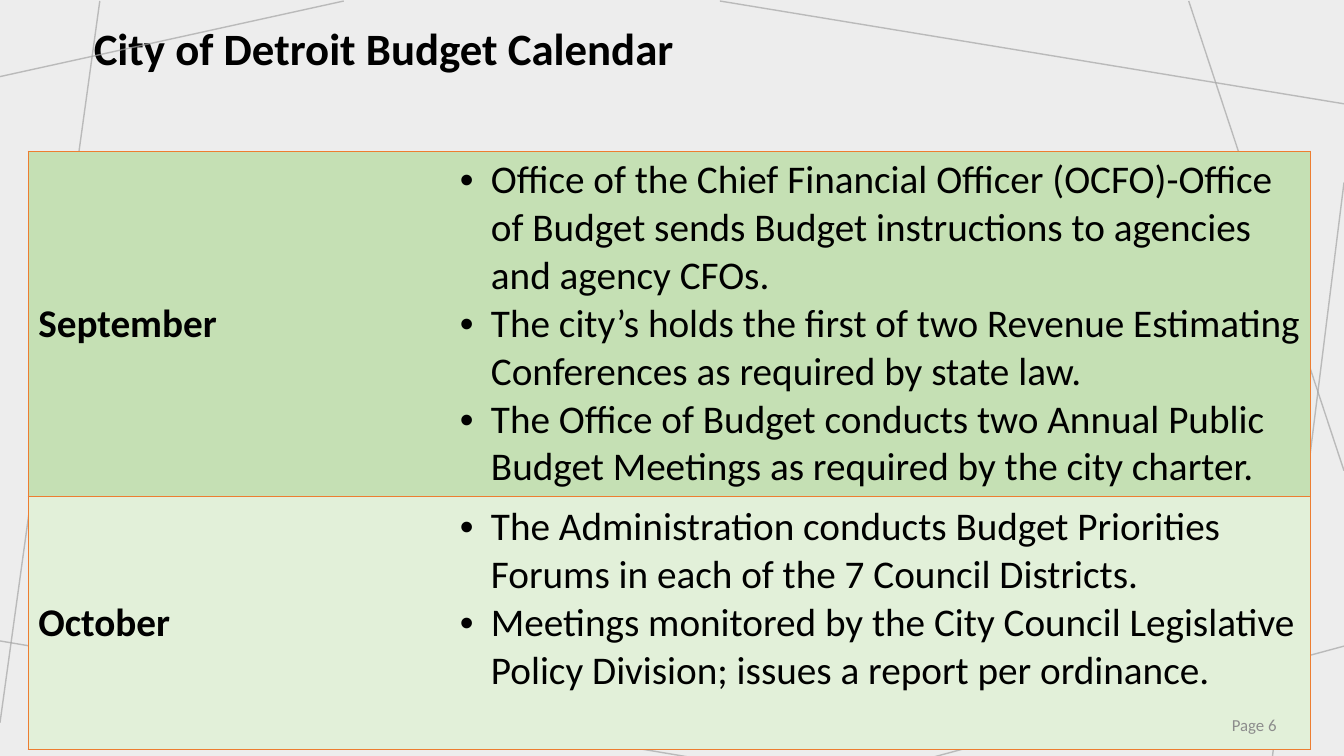
from lxml.etree import SubElement
from pptx import Presentation
from pptx.dml.color import RGBColor
from pptx.enum.shapes import MSO_CONNECTOR as Connector
from pptx.enum.text import MSO_ANCHOR as Anchor, MSO_AUTO_SIZE as AutoSize, PP_ALIGN as Align
from pptx.oxml import parse_xml
from pptx.oxml.ns import nsdecls, qn
from pptx.util import Emu, Pt

PX = 9144

BACKGROUND_LINES = [
    (341, 1, 0, 76), (99, 1, 0, 717), (683, 751, -5, 635), (1333, 641, 926, 751),
    (1333, 181, 1262, 751), (1333, 467, 1179, 1), (1333, 103, 714, 1),
]
CALENDAR = [
    ("September", "C5E0B4", 298, 5, [
        "Office of the Chief Financial Officer (OCFO)-Office of Budget sends Budget "
        "instructions to agencies and agency CFOs.",
        "The city’s holds the first of two Revenue Estimating Conferences as required by state law.",
        "The Office of Budget conducts two Annual Public Budget Meetings as required by the city charter.",
    ]),
    ("October", "E2F0D9", 251, 53, [
        "The Administration conducts Budget Priorities Forums in each of the 7 Council Districts.",
        "Meetings monitored by the City Council Legislative Policy Division; issues a report per ordinance.",
    ]),
]


def px(length):
    return Emu(length * PX)


def color(value):
    return RGBColor.from_string(value)


class SlideBuilder:
    font_name = "Calibri"
    ink = "000000"
    line_color = "A5A5A5"
    border_color = "ED7D31"

    def __init__(self, deck):
        self.page = deck.slides.add_slide(deck.slide_layouts[5])

    def background(self, value):
        fill = self.page.background.fill
        fill.solid()
        fill.fore_color.rgb = color(value)

    def line(self, *ends):
        line = self.page.shapes.add_connector(Connector.STRAIGHT, *map(px, ends))
        line.line.width = Pt(1)
        line.line.color.rgb = color(self.line_color)
        tint = line.line._ln.find(".//" + qn("a:srgbClr"))
        SubElement(tint, qn("a:alpha"), val="70000")
        SubElement(line._element.spPr, qn("a:effectLst"))

    def set_text(self, para, text, size, bold=False, ink=None):
        para.text = text
        font = para.font
        font.name, font.size, font.bold = self.font_name, Pt(size), bold
        font.color.rgb = color(ink or self.ink)

    def title(self, text, left, top, width, height):
        box = self.page.shapes.title
        box.left, box.top, box.width, box.height = map(px, (left, top, width, height))
        frame = box.text_frame
        frame.vertical_anchor, frame.auto_size = Anchor.BOTTOM, AutoSize.NONE
        para = frame.paragraphs[0]
        self.set_text(para, text, 32, True)
        para.alignment, para.line_spacing = Align.LEFT, 0.9

    def page_label(self, text, *place):
        frame = self.page.shapes.add_textbox(*map(px, place)).text_frame
        frame.word_wrap, frame.vertical_anchor = True, Anchor.MIDDLE
        self.set_text(frame.paragraphs[0], text, 12, ink="8C8C8C")
        frame.paragraphs[0].alignment = Align.RIGHT

    def bullet(self, para, indent):
        props = para._p.get_or_add_pPr()
        props.set("marL", str(px(indent)))
        props.set("indent", str(px(-indent)))
        props.insert(0, parse_xml(f'<a:buFont {nsdecls("a")} typeface="Arial"/>'))
        props.insert(1, parse_xml(f'<a:buChar {nsdecls("a")} char="•"/>'))

    def style_cell(self, cell, fill, sides):
        cell.vertical_anchor = Anchor.MIDDLE
        cell.fill.solid()
        cell.fill.fore_color.rgb = color(fill)
        props = cell._tc.get_or_add_tcPr()
        for place, side in enumerate("LRTB"):
            paint = "<a:noFill/>"
            if side in sides:
                paint = f'<a:solidFill><a:srgbClr val="{self.border_color}"/></a:solidFill>'
            props.insert(place, parse_xml(
                f'<a:ln{side} {nsdecls("a")} w="{Pt(1)}">{paint}</a:ln{side}>'))

    def calendar(self, entries, left, top, widths):
        heights = [entry[2] for entry in entries]
        table = self.page.shapes.add_table(
            len(entries), 2, *map(px, (left, top, sum(widths), sum(heights)))).table
        table.first_row = table.horz_banding = False
        for column, width in zip(table.columns, widths):
            column.width = px(width)
        for row, (month, fill, height, bottom, events) in zip(table.rows, entries):
            row.height = px(height)
            month_cell, event_cell = row.cells
            self.style_cell(month_cell, fill, "LTB")
            self.style_cell(event_cell, fill, "RTB")
            event_cell.margin_bottom = px(bottom)
            self.set_text(month_cell.text_frame.paragraphs[0], month, 28, True)
            frame = event_cell.text_frame
            for index, event in enumerate(events):
                para = frame.add_paragraph() if index else frame.paragraphs[0]
                self.set_text(para, event, 28)
                self.bullet(para, 31)


def main():
    deck = Presentation()
    deck.slide_width, deck.slide_height = px(1333), px(750)
    slide = SlideBuilder(deck)
    slide.background("EDEDED")
    for ends in BACKGROUND_LINES:
        slide.line(*ends)
    slide.title("City of Detroit Budget Calendar", 83, 0, 1160, 80)
    slide.calendar(CALENDAR, 28, 150, (418, 854))
    slide.page_label("Page 6", 1169, 699, 107, 40)
    deck.save("out.pptx")


if __name__ == "__main__":
    main()
